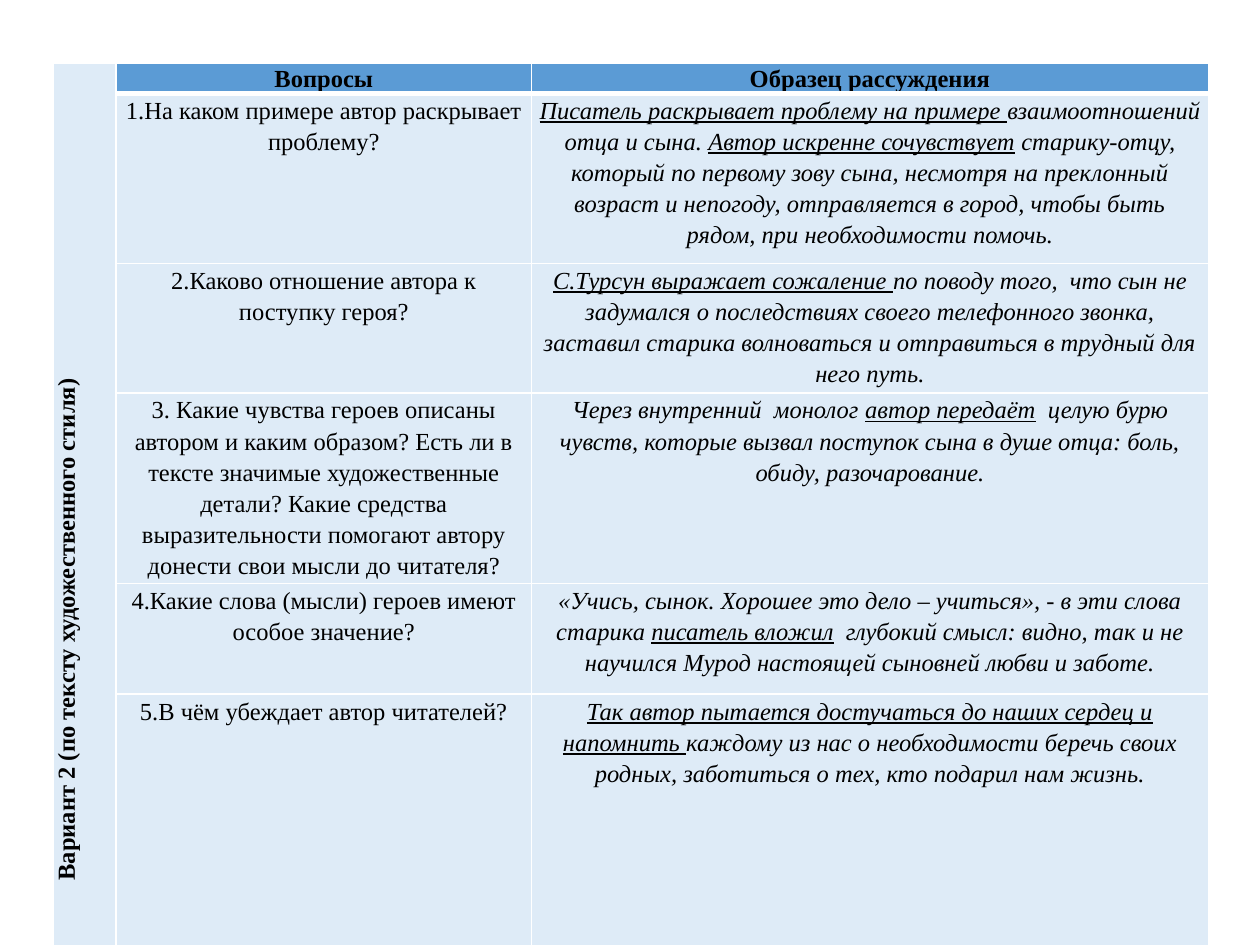
from lxml import etree
from pptx import Presentation
from pptx.dml.color import RGBColor
from pptx.enum.text import PP_ALIGN
from pptx.oxml.ns import qn
from pptx.util import Inches, Pt

CENTER = PP_ALIGN.CENTER
BLANK_LAYOUT = 6
FONT = "Times New Roman"
COLORS = {"header": "5B9BD5", "body": "DEEBF7", "border": "FFFFFF", "text": "000000"}

# Content: underscores enclose underlined phrases
SIDE_TITLE = "Вариант 2 (по тексту художественного стиля)"
HEADERS = ("Вопросы", "Образец рассуждения")
ANSWERS = [
    ("1.На каком примере автор раскрывает проблему?",
     "_Писатель раскрывает проблему на примере _взаимоотношений отца и сына. "
     "_Автор искренне сочувствует_ старику-отцу, который по первому зову сына, "
     "несмотря на преклонный возраст и непогоду, отправляется в город, чтобы быть "
     "рядом, при необходимости помочь."),
    ("2.Каково отношение автора к поступку героя?",
     "_С.Турсун выражает сожаление _по поводу того,  что сын не задумался о "
     "последствиях своего телефонного звонка, заставил старика волноваться и "
     "отправиться в трудный для него путь."),
    ("3. Какие чувства героев описаны автором и каким образом? Есть ли в тексте "
     "значимые художественные детали? Какие средства выразительности помогают "
     "автору донести свои мысли до читателя?",
     "Через внутренний  монолог _автор передаёт_  целую бурю чувств, которые "
     "вызвал поступок сына в душе отца: боль, обиду, разочарование."),
    ("4.Какие слова (мысли) героев имеют особое значение?",
     "«Учись, сынок. Хорошее это дело – учиться», - в эти слова старика "
     "_писатель вложил_  глубокий смысл: видно, так и не научился Мурод "
     "настоящей сыновней любви и заботе."),
    ("5.В чём убеждает автор читателей?",
     "_Так автор пытается достучаться до наших сердец и напомнить _каждому из нас "
     "о необходимости беречь своих родных, заботиться о тех, кто подарил нам жизнь."),
]

# Grid in inches
LEFT, TOP = 0.42, 0.5
COLUMNS = (0.5, 3.3, 5.37)
ROWS = (0.24, 1.35, 1.03, 1.51, 0.88, 1.43)


def style_cell(cell, fill, bottom_width=1):
    """Set the margins, borders and fill of a cell."""
    cell.margin_left = cell.margin_right = Inches(0.06)
    cell.margin_top = cell.margin_bottom = 0
    properties = cell._tc.get_or_add_tcPr()
    for side, width in (("L", 1), ("R", 1), ("T", 1), ("B", bottom_width)):
        line = etree.SubElement(properties, qn(f"a:ln{side}"), w=str(Pt(width)))
        solid = etree.SubElement(line, qn("a:solidFill"))
        etree.SubElement(solid, qn("a:srgbClr"), val=COLORS["border"])
    cell.fill.solid()
    cell.fill.fore_color.rgb = RGBColor.from_string(COLORS[fill])


def write(cell, text, spacing=None, bold=False, italic=False):
    """Write centred text, underlining the marked phrases."""
    para = cell.text_frame.paragraphs[0]
    para.alignment = CENTER
    para.line_spacing = spacing
    for index, part in enumerate(text.split("_")):
        if not part:
            continue
        span = para.add_run()
        span.text = part
        font = span.font
        font.name, font.size = FONT, Pt(14)
        font.bold, font.italic, font.underline = bold, italic, index % 2 == 1
        font.color.rgb = RGBColor.from_string(COLORS["text"])
    return para


deck = Presentation()
deck.slide_width, deck.slide_height = Inches(10), Inches(7.5)
slide = deck.slides.add_slide(deck.slide_layouts[BLANK_LAYOUT])

# Table frame
table = slide.shapes.add_table(
    len(ROWS), len(COLUMNS), Inches(LEFT), Inches(TOP),
    Inches(sum(COLUMNS)), Inches(sum(ROWS))).table
table.first_row = table.horz_banding = False
for column, width in zip(table.columns, COLUMNS):
    column.width = Inches(width)
for row, height in zip(table.rows, ROWS):
    row.height = Inches(height)

# Vertical title along the left side
side = table.cell(0, 0)
side.merge(table.cell(len(ROWS) - 1, 0))
style_cell(side, "body", bottom_width=3)
side._tc.get_or_add_tcPr().set("vert", "vert270")
side_para = write(side, SIDE_TITLE, bold=True)
side_para.space_before = Pt(5)
side_para._p.get_or_add_pPr().set("marL", str(Inches(0.08)))

# Header row
for column, text in enumerate(HEADERS, 1):
    cell = table.cell(0, column)
    style_cell(cell, "header", bottom_width=3)
    write(cell, text, Pt(16.8), bold=True)

# Questions and sample answers
for row, texts in enumerate(ANSWERS, 1):
    for column, text in enumerate(texts, 1):
        cell = table.cell(row, column)
        style_cell(cell, "body", bottom_width=1)
        if row == 1:
            top = cell._tc.tcPr.find(qn("a:lnT"))
            top.set("w", str(Pt(3)))
        write(cell, text, 1.15, italic=column == 2)

deck.save("out.pptx")
